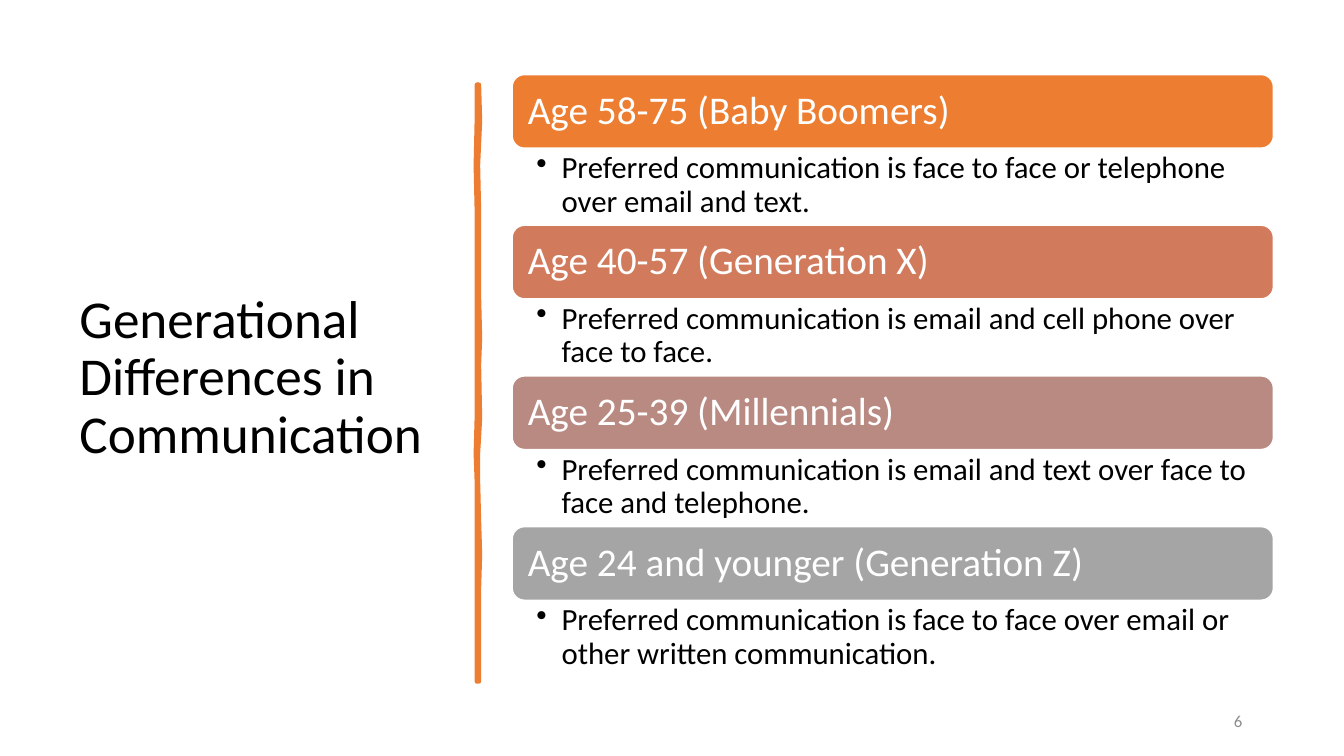
from lxml import etree
from pptx import Presentation
from pptx.dml.color import RGBColor
from pptx.enum import shapes, text
from pptx.oxml.ns import qn
from pptx.util import Inches, Pt

TITLE = "Generational Differences in Communication  "
PAGE = "6"
COLORS = {"accent": "ED7D31", "white": "FFFFFF", "black": "000000", "muted": "8C8C8C"}
FONT = "Calibri"
GENERATIONS = [
    ("Age 58-75 (Baby Boomers)", "ED7D31",
     "Preferred communication is face to face or telephone over email and text."),
    ("Age 40-57 (Generation X)", "D17B5C",
     "Preferred communication is email and cell phone over face to face."),
    ("Age 25-39 (Millennials)", "B98A82",
     "Preferred communication is email and text over face to face and telephone. "),
    ("Age 24 and younger (Generation Z)", "A5A5A5",
     "Preferred communication is face to face over email or other written communication. "),
]
DIVIDER = [
    (0.84, 4.73, 4.75), (1.2, 4.73, 4.76), (1.64, 4.72, 4.74), (2.08, 4.73, 4.75),
    (2.5, 4.73, 4.75), (2.94, 4.73, 4.75), (3.35, 4.73, 4.76), (3.62, 4.73, 4.75),
    (4.15, 4.73, 4.76), (4.5, 4.72, 4.74), (4.77, 4.73, 4.74), (5.16, 4.73, 4.75),
    (5.5, 4.73, 4.76), (5.84, 4.73, 4.75), (6.3, 4.73, 4.75), (6.76, 4.73, 4.75),
]
LEFT, TOP, WIDTH = 5.08, 0.74, 7.55
HEADER_H, BODY_H, PITCH = 0.73, 0.76, 1.495


def rgb(value):
    return RGBColor.from_string(value)


def write(sp, content, size, color, insets=(0.1, 0.05, 0.1, 0.05),
          anchor=text.MSO_ANCHOR.MIDDLE, align=text.PP_ALIGN.LEFT, spacing=0.9):
    tf = sp.text_frame
    tf.word_wrap = True
    tf.vertical_anchor = anchor
    tf.margin_left, tf.margin_top, tf.margin_right, tf.margin_bottom = map(Inches, insets)
    p = tf.paragraphs[0]
    p.text = content
    p.alignment = align
    p.line_spacing = spacing
    p.font.name, p.font.size = FONT, Pt(size)
    p.font.color.rgb = rgb(color)
    return p


def add_bullet(p):
    pPr = p._p.get_or_add_pPr()
    pPr.set("marL", str(Inches(0.25)))
    pPr.set("indent", str(Inches(-0.25)))
    bullet = etree.Element(qn("a:buChar"), char="•")
    pPr.find(qn("a:defRPr")).addprevious(bullet)


def paint(sp, fill, line, width):
    sp.shadow.inherit = False
    sp.fill.solid()
    sp.fill.fore_color.rgb = rgb(fill)
    sp.line.color.rgb = rgb(line)
    sp.line.width = Pt(width)


def add_box(s, left, top, width, height):
    return s.shapes.add_textbox(*map(Inches, (left, top, width, height)))


def add_divider(s):
    outline = [(right, y) for y, left, right in DIVIDER]
    outline += [(left, y) for y, left, right in reversed(DIVIDER)]
    points = [(Inches(x), Inches(y)) for x, y in outline]
    builder = s.shapes.build_freeform(*points[0])
    builder.add_line_segments(points[1:], close=True)
    sp = builder.convert_to_shape()
    paint(sp, COLORS["accent"], COLORS["accent"], 3.25)
    etree.SubElement(sp.line._get_or_add_ln(), qn("a:round"))


def add_generation(s, index, heading, color, detail):
    top = TOP + index * PITCH
    sp = s.shapes.add_shape(shapes.MSO_SHAPE.ROUNDED_RECTANGLE,
                            *map(Inches, (LEFT, top, WIDTH, HEADER_H)))
    paint(sp, color, COLORS["white"], 1)
    write(sp, heading, 28, COLORS["white"], (0.12,) * 4)
    body = add_box(s, LEFT, top + HEADER_H, WIDTH, BODY_H)
    p = write(body, detail, 22, COLORS["black"], (0.24, 0.04, 0.22, 0.04), text.MSO_ANCHOR.TOP)
    add_bullet(p)


def main():
    prs = Presentation()
    prs.slide_width, prs.slide_height = Inches(13.33), Inches(7.5)
    s = prs.slides.add_slide(prs.slide_layouts[6])
    write(add_box(s, 0.69, 0.7, 3.74, 6.11), TITLE, 38, COLORS["black"])
    add_divider(s)
    for index, generation in enumerate(GENERATIONS):
        add_generation(s, index, *generation)
    write(add_box(s, 9.42, 6.95, 3, 0.4), PAGE, 12, COLORS["muted"],
          align=text.PP_ALIGN.RIGHT, spacing=1.0)
    prs.save("out.pptx")


if __name__ == "__main__":
    main()
